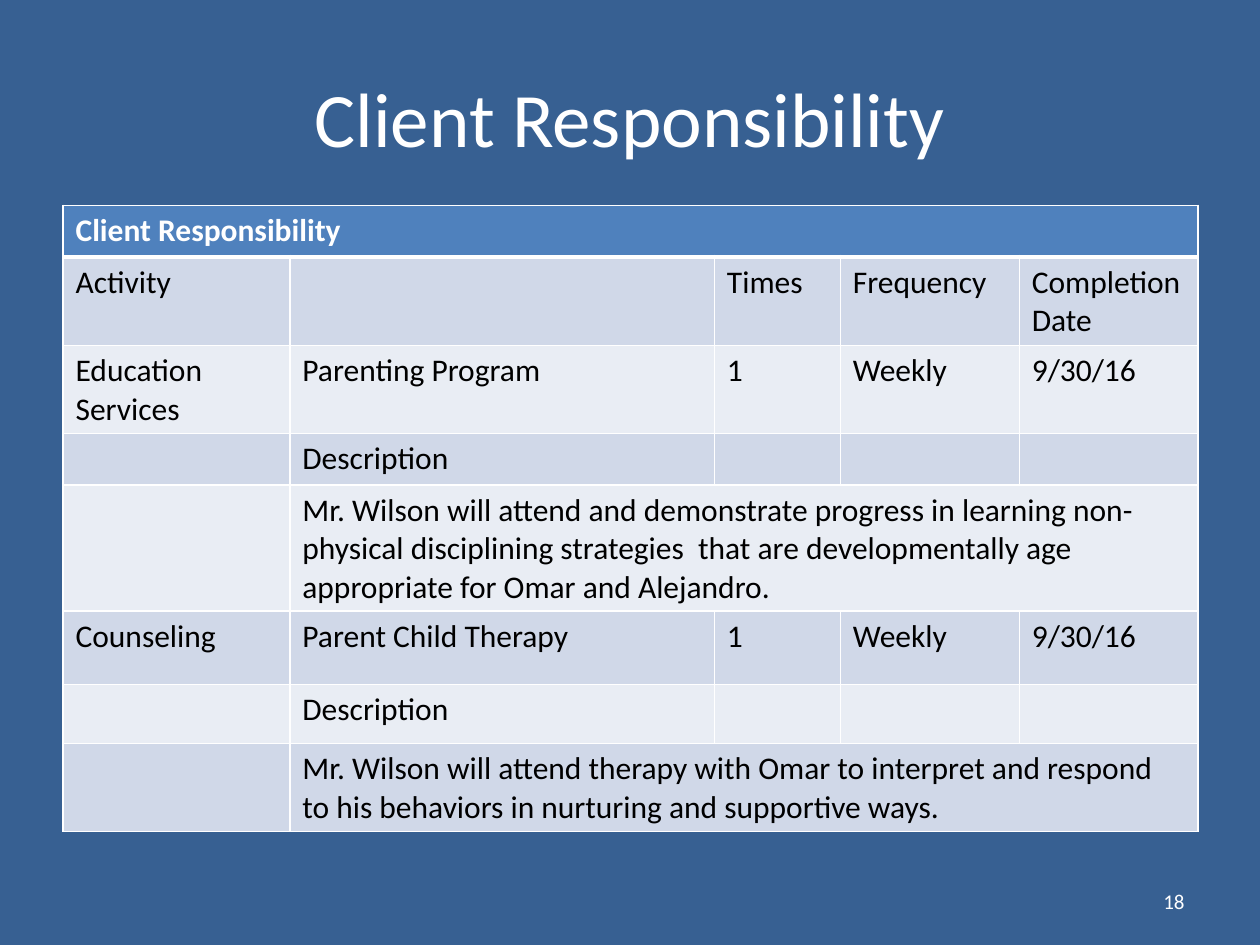
from lxml.etree import SubElement
from pptx import Presentation
from pptx.dml.color import RGBColor
from pptx.enum.text import MSO_ANCHOR as Anchor, PP_ALIGN as Align
from pptx.oxml.ns import qn
from pptx.util import Inches, Pt

COLORS = {
    "background": "376092",
    "header": "4F81BD",
    "band_dark": "D0D8E8",
    "band_light": "E9EDF4",
    "white": "FFFFFF",
    "black": "000000",
}
COLUMNS = [1.8, 3.37, 1, 1.42, 1.42]
ROWS = [
    (0.41, ["Client Responsibility"]),
    (0.41, ["Activity", "", "Times", "Frequency", "Completion Date"]),
    (0.41, ["Education Services", "Parenting Program", "1", "Weekly", "9/30/16"]),
    (0.41, ["", "Description", "", "", ""]),
    (0.58, ["", "Mr. Wilson will attend and demonstrate progress in learning "
                "non-physical disciplining strategies  that are developmentally "
                "age appropriate for Omar and Alejandro."]),
    (0.58, ["Counseling", "Parent Child Therapy", "1", "Weekly", "9/30/16"]),
    (0.47, ["", "Description", "", "", ""]),
    (0.58, ["", "Mr. Wilson will attend therapy with Omar to interpret and "
                "respond to his behaviors in nurturing and supportive ways."]),
]


def rgb(name):
    return RGBColor.from_string(COLORS[name])


def write(tf, text, size=18, color="black", bold=False, align=Align.LEFT):
    p = tf.paragraphs[0]
    p.alignment = align
    r = p.add_run()
    r.text = text
    r.font.name = "Calibri"
    r.font.size = Pt(size)
    r.font.bold = bold
    r.font.color.rgb = rgb(color)


def add_text(s, box, text, **style):
    tf = s.shapes.add_textbox(*map(Inches, box)).text_frame
    tf.word_wrap = True
    tf.vertical_anchor = Anchor.MIDDLE
    write(tf, text, **style)


def set_borders(cell, top=1, bottom=1):
    tcPr = cell._tc.get_or_add_tcPr()
    for side, width in (("L", 1), ("R", 1), ("T", top), ("B", bottom)):
        ln = SubElement(tcPr, qn(f"a:ln{side}"), w=str(Pt(width)))
        fill = SubElement(ln, qn("a:solidFill"))
        SubElement(fill, qn("a:srgbClr"), val=COLORS["white"])


def add_plan_table(s, box):
    frame = s.shapes.add_table(len(ROWS), len(COLUMNS), *map(Inches, box))
    table = frame.table
    for column, width in zip(table.columns, COLUMNS):
        column.width = Inches(width)
    for i, (height, texts) in enumerate(ROWS):
        table.rows[i].height = Inches(height)
        header = i == 0
        band = "header" if header else "band_dark" if i % 2 else "band_light"
        for j in range(len(COLUMNS)):
            cell = table.cell(i, j)
            set_borders(cell, top=3 if i == 1 else 1, bottom=3 if header else 1)
            cell.fill.solid()
            cell.fill.fore_color.rgb = rgb(band)
        for j, text in enumerate(texts):
            if text:
                write(table.cell(i, j).text_frame, text, bold=header,
                      color="white" if header else "black")
        if len(texts) < len(COLUMNS):
            table.cell(i, len(texts) - 1).merge(table.cell(i, len(COLUMNS) - 1))


def main():
    prs = Presentation()
    prs.slide_width, prs.slide_height = Inches(10), Inches(7.5)
    s = prs.slides.add_slide(prs.slide_layouts[6])
    s.background.fill.solid()
    s.background.fill.fore_color.rgb = rgb("background")
    add_text(s, (0.5, 0.3, 9, 1.25), "Client Responsibility",
             size=44, color="white", align=Align.CENTER)
    add_plan_table(s, (0.5, 1.63, 9, 4.96))
    add_text(s, (7.17, 6.95, 2.33, 0.4), "18",
             size=12, color="white", align=Align.RIGHT)
    prs.save("out.pptx")


if __name__ == "__main__":
    main()
